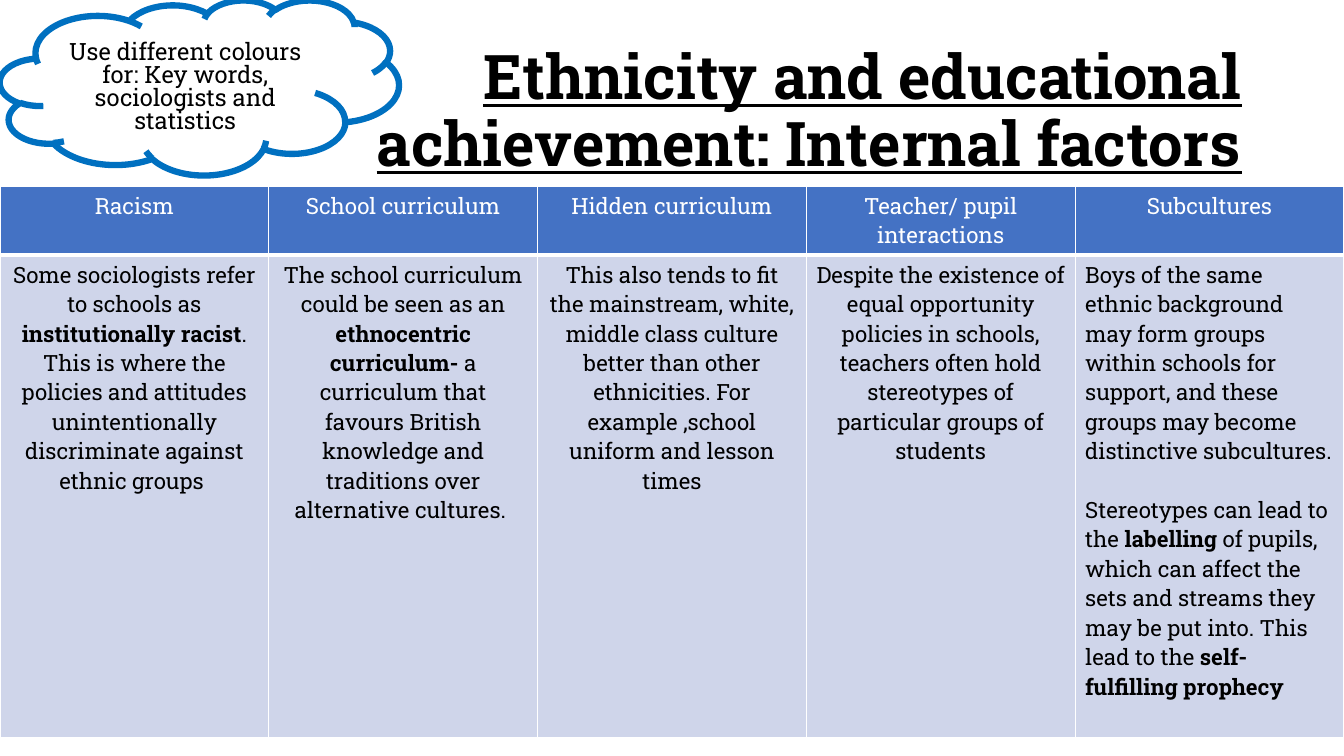
from pptx import Presentation
from pptx.dml.color import RGBColor as RGB
from pptx.enum.shapes import MSO_SHAPE as SHAPE
from pptx.enum.text import MSO_ANCHOR as ANCHOR, MSO_AUTO_SIZE as FIT, PP_ALIGN as ALIGN
from pptx.oxml.ns import qn
from pptx.util import Pt
from lxml.etree import SubElement as Sub

PX = 914400 / 100.8
FONT = "Roboto Slab"
HUES = {"ink": "000000", "white": "FFFFFF", "head": "4472C4",
        "body": "CFD5EA", "cloud": "0070C0"}

TITLE = "Ethnicity and educational achievement: Internal factors"
HINT = "Use different colours for: Key words, sociologists and statistics"
HEADS = ["Racism", "School curriculum", "Hidden curriculum",
         "Teacher/ pupil interactions", "Subcultures"]
# Odd-numbered runs of each paragraph are bold.
BODIES = [
    [["Some sociologists refer to schools as ", "institutionally racist",
      ". This is where the policies and attitudes unintentionally "
      "discriminate against ethnic groups "]],
    [["The school curriculum could be seen as an ", "ethnocentric curriculum-",
      " a curriculum that favours British knowledge and traditions over "
      "alternative cultures. "]],
    [["This also tends to fit the mainstream, white, middle class culture "
      "better than other ethnicities. For example ,school uniform and lesson times"]],
    [["Despite the existence of equal opportunity policies in schools, teachers "
      "often hold stereotypes of particular groups of students"]],
    [["Boys of the same ethnic background may form groups within schools for "
      "support, and these groups may become distinctive subcultures."],
     ["Stereotypes can lead to the ", "labelling",
      " of pupils, which can affect the sets and streams they may be put into. "
      "This lead to the ", "self-fulfilling prophecy"]],
]
BOXES = {"title": (93, 40, 1159, 146), "table": (0, 186, 1344, 549),
         "cloud": (0, 0, 399, 175)}
ROWS = (66, 483)
EDGES = {"head": {"L": 1, "R": 1, "T": 1, "B": 3},
         "body": {"L": 1, "R": 1, "T": 1, "B": 1}}
LOOKS = {
    "title": {"size": Pt(44), "bold": True, "underline": True},
    "hint": {"size": Pt(18)},
    "cell": {"size": Pt(16), "bold": False},
}


def px(n):
    return round(n * PX)


def place(name):
    return [px(n) for n in BOXES[name]]


def hue(name):
    return RGB.from_string(HUES[name])


def write(frame, paras, look, ink, align):
    for i, runs in enumerate(paras):
        para = frame.add_paragraph() if i else frame.paragraphs[0]
        para.alignment = align
        if i:
            para.space_before = Pt(21)
        for j, text in enumerate(runs):
            run = para.add_run()
            run.text = text
            for key, value in {"name": FONT, **LOOKS[look]}.items():
                setattr(run.font, key, value)
            if j % 2:
                run.font.bold = True
            run.font.color.rgb = hue(ink)


def dress(cell, kind):
    props = cell._tc.get_or_add_tcPr()
    for side, width in EDGES[kind].items():
        line = Sub(props, qn(f"a:ln{side}"), w=str(Pt(width)))
        Sub(Sub(line, qn("a:solidFill")), qn("a:srgbClr"), val=HUES["white"])
    cell.fill.solid()
    cell.fill.fore_color.rgb = hue(kind)


def fit(frame):
    frame.word_wrap = True
    frame.vertical_anchor = ANCHOR.MIDDLE
    frame.auto_size = FIT.TEXT_TO_FIT_SHAPE


def main():
    deck = Presentation()
    deck.slide_width, deck.slide_height = px(1344), px(756)
    slide = deck.slides.add_slide(deck.slide_layouts[6])
    shapes = slide.shapes

    frame = shapes.add_textbox(*place("title")).text_frame
    write(frame, [[TITLE]], "title", "ink", ALIGN.RIGHT)
    frame.paragraphs[0].line_spacing = 0.9
    fit(frame)

    table = shapes.add_table(2, len(HEADS), *place("table")).table
    for row, high in zip(table.rows, ROWS):
        row.height = px(high)
    for col, (head, body) in enumerate(zip(HEADS, BODIES)):
        align = ALIGN.LEFT if len(body) > 1 else ALIGN.CENTER
        parts = (("head", [[head]], "white", ALIGN.CENTER),
                 ("body", body, "ink", align))
        for row, (kind, paras, ink, side) in enumerate(parts):
            cell = table.cell(row, col)
            dress(cell, kind)
            write(cell.text_frame, paras, "cell", ink, side)

    cloud = shapes.add_shape(SHAPE.CLOUD, *place("cloud"))
    cloud.shadow.inherit = False
    cloud.fill.solid()
    cloud.fill.fore_color.rgb = hue("white")
    cloud.line.color.rgb = hue("cloud")
    cloud.line.width = Pt(4.5)
    write(cloud.text_frame, [[HINT]], "hint", "ink", ALIGN.CENTER)
    fit(cloud.text_frame)

    deck.save("out.pptx")


if __name__ == "__main__":
    main()
